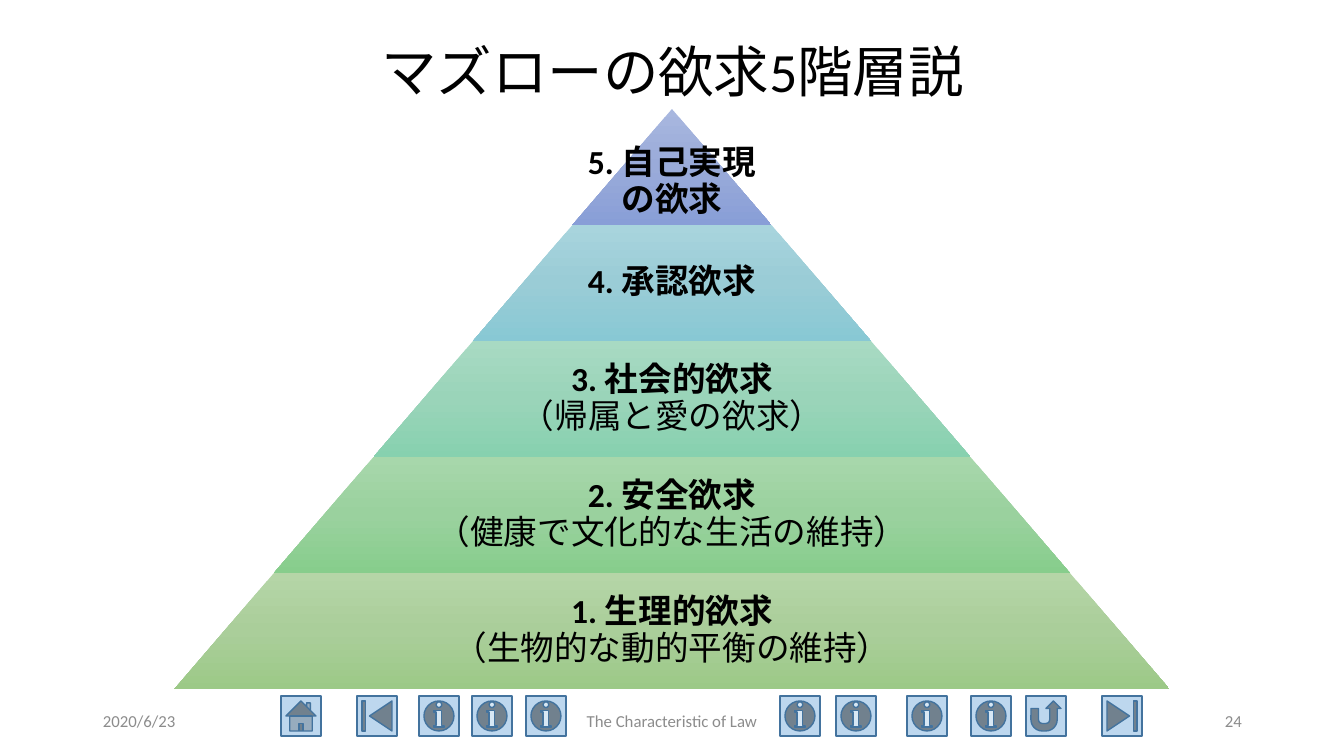
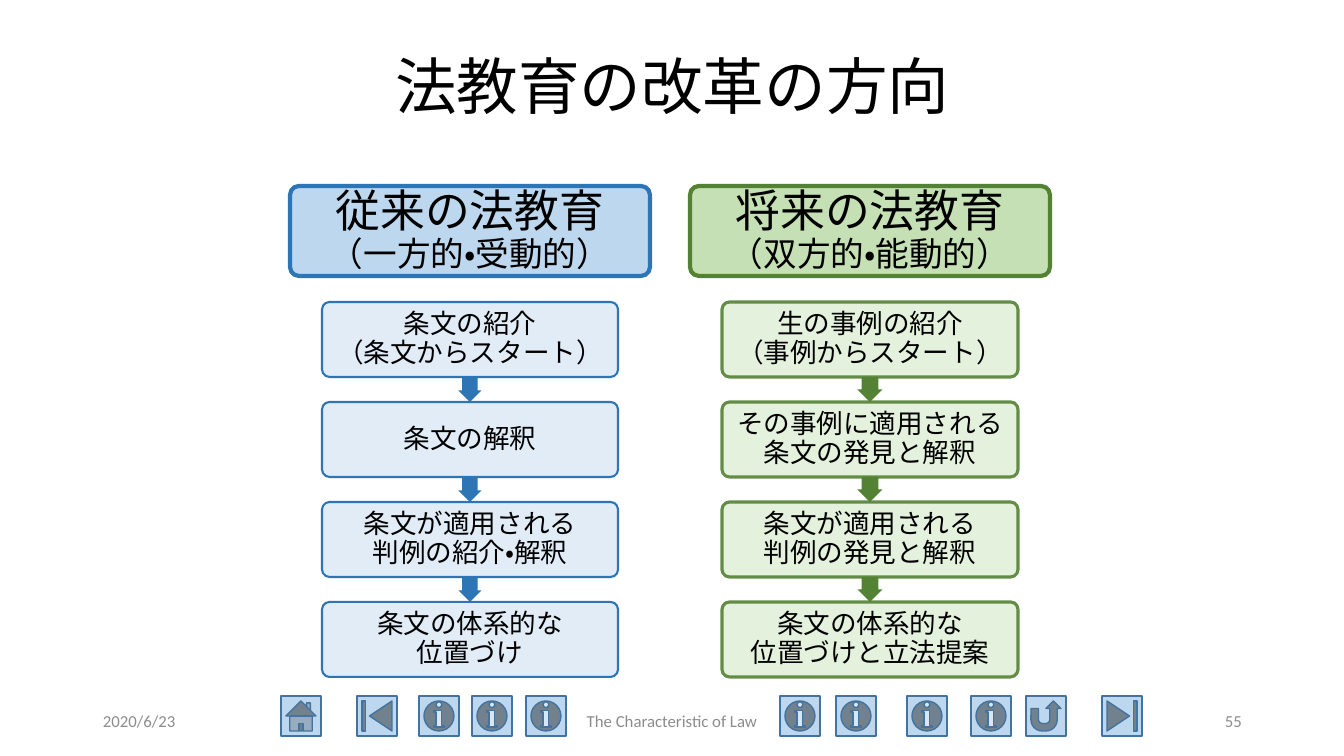
from copy import deepcopy

from lxml import etree
from pptx import Presentation
from pptx.dml.color import RGBColor
from pptx.enum.lang import MSO_LANGUAGE_ID
from pptx.enum.shapes import MSO_SHAPE
from pptx.enum.text import MSO_ANCHOR, PP_ALIGN
from pptx.oxml.ns import qn
from pptx.util import Emu, Pt

LEFT, CENTER, RIGHT = PP_ALIGN.LEFT, PP_ALIGN.CENTER, PP_ALIGN.RIGHT
MIDDLE = MSO_ANCHOR.MIDDLE
JAPANESE = MSO_LANGUAGE_ID.JAPANESE
TRAPEZOID, ROUNDED = MSO_SHAPE.TRAPEZOID, MSO_SHAPE.ROUNDED_RECTANGLE
DOWN_ARROW = MSO_SHAPE.DOWN_ARROW
HOME, BEGINNING = MSO_SHAPE.ACTION_BUTTON_HOME, MSO_SHAPE.ACTION_BUTTON_BEGINNING
INFORMATION = MSO_SHAPE.ACTION_BUTTON_INFORMATION
RETURN, END = MSO_SHAPE.ACTION_BUTTON_RETURN, MSO_SHAPE.ACTION_BUTTON_END

SLIDE_WIDTH, SLIDE_HEIGHT = 1344, 756
SCALE = 12192000 / SLIDE_WIDTH
FONT = "Calibri"
COLORS = {
    "text": "000000", "footer": "8C8C8C",
    "button": "BDD7EE", "button_line": "43739E",
    "blue": "2E75B6", "blue_header": "BDD7EE", "blue_step": "DEEBF7",
    "green": "548235", "green_header": "C5E0B4", "green_step": "E2F0D9",
}
BUTTONS = [
    (HOME, 281), (BEGINNING, 357), (INFORMATION, 419), (INFORMATION, 472),
    (INFORMATION, 526), (INFORMATION, 780), (INFORMATION, 836),
    (INFORMATION, 907), (INFORMATION, 971), (RETURN, 1026), (END, 1102),
]


def px(length):
    return Emu(round(length * SCALE))


def rgb(name):
    return RGBColor.from_string(COLORS[name])


def set_opacity(element, percent):
    for color in element.iter(qn("a:srgbClr")):
        etree.SubElement(color, qn("a:alpha"), val=str(percent * 1000))


def write(shape, text, sizes, *, bolds=(False,), color="text", align=CENTER,
          spacing=0.9, insets=(3, 3)):
    """Fill a shape with lines; the last size and weight serve any further lines."""
    frame = shape.text_frame
    frame.word_wrap = True
    frame.vertical_anchor = MIDDLE
    frame.margin_left = frame.margin_right = px(insets[0])
    frame.margin_top = frame.margin_bottom = px(insets[1])
    para = frame.paragraphs[0]
    para.alignment = align
    para.line_spacing = spacing
    for index, line in enumerate(text.split("\n")):
        if index:
            para.add_line_break()
        span = para.add_run()
        span.text = line
        font = span.font
        font.name = FONT
        font.size = Pt(sizes[min(index, len(sizes) - 1)])
        font.bold = bolds[min(index, len(bolds) - 1)]
        font.color.rgb = rgb(color)
        font.language_id = JAPANESE


class Deck:
    """Holds the shared style and the slide being built."""

    def __init__(self):
        self.deck = Presentation()
        self.deck.slide_width = px(SLIDE_WIDTH)
        self.deck.slide_height = px(SLIDE_HEIGHT)
        self.page = None

    def add_page(self, title, number, title_size, title_height):
        self.page = self.deck.slides.add_slide(self.deck.slide_layouts[6])
        for kind, left in BUTTONS:
            self.shape(kind, left, 696, 40, 40, fill="button",
                       line="button_line", weight=1)
        self.text(title, 93, 40, 1159, title_height, [title_size], insets=(10, 5))
        for text, left, width, align in (
            ("2020/6/23", 93, 302, LEFT),
            ("The Characteristic of Law", 445, 454, CENTER),
            (number, 950, 302, RIGHT),
        ):
            self.text(text, left, 701, width, 40, [12], color="footer",
                      align=align, spacing=1.0, insets=(10, 5))

    def text(self, text, left, top, width, height, sizes, **style):
        box = self.page.shapes.add_textbox(px(left), px(top), px(width), px(height))
        write(box, text, sizes, **style)

    def shape(self, kind, left, top, width, height, *, fill=None, line=None,
              weight=1, adjust=()):
        shape = self.page.shapes.add_shape(
            kind, px(left), px(top), px(width), px(height))
        shape.shadow.inherit = False
        for index, value in enumerate(adjust):
            shape.adjustments[index] = value
        if fill:
            shape.fill.solid()
            shape.fill.fore_color.rgb = rgb(fill)
        if line:
            shape.line.color.rgb = rgb(line)
            shape.line.width = Pt(weight)
        else:
            shape.line.fill.background()
        return shape

    def tier(self, center, top, width, height, slope, gradient):
        tier = self.shape(TRAPEZOID, center - width / 2, top, width, height,
                          adjust=[slope])
        tier.fill.gradient()
        tier.fill.gradient_angle = 270
        stop_list = tier._element.spPr.find(".//" + qn("a:gsLst"))
        stop_list.append(deepcopy(stop_list[-1]))
        for stop, position, color in zip(tier.fill.gradient_stops, (0, 0.5, 1), gradient):
            stop.position = position
            stop.color.rgb = RGBColor.from_string(color)

    def card(self, text, left, top, width, height, sizes, *, opacity=100,
             line_opacity=100, **style):
        card = self.shape(ROUNDED, left, top, width, height, adjust=[0.1], **style)
        properties = card._element.spPr
        if opacity < 100:
            set_opacity(properties.find(qn("a:solidFill")), opacity)
        if line_opacity < 100:
            set_opacity(properties.find(qn("a:ln")), line_opacity)
        write(card, text, sizes)

    def save(self):
        self.deck.save("out.pptx")


def build_pyramid(deck):
    deck.add_page("マズローの欲求5階層説", "24", 39.6, 69)
    center, apex, height, growth = 672, 109, 116, 199
    tiers = [
        ("5. 自己実現\nの欲求", ("A8B7DF", "9AABD9", "889ED7")),
        ("4. 承認欲求", ("A8D4DD", "9ACCD6", "88C8D4")),
        ("3. 社会的欲求\n（帰属と愛の欲求）", ("A8DAC3", "9AD4B9", "87D1AF")),
        ("2. 安全欲求\n（健康で文化的な生活の維持）", ("A7D7AB", "9AD19E", "87CD8C")),
        ("1. 生理的欲求\n（生物的な動的平衡の維持）", ("B5D5A7", "AACE9A", "9CC987")),
    ]
    for index, (label, gradient) in enumerate(tiers):
        top, width = apex + index * height, growth * (index + 1)
        deck.tier(center, top, width, height, growth / 2 / height, gradient)
        at_peak = index == 0
        label_width = width if at_peak else round(width * 0.65)
        label_drop = 15 if at_peak else 0
        deck.text(label, center - label_width / 2, top + label_drop,
                  label_width, height, [24], bolds=(True, at_peak))


def build_reform(deck):
    deck.add_page("法教育の改革の方向", "55", 44, 99)
    header_width, step_width, step_height, pitch = 360, 296, 75, 100
    columns = [
        ("blue", 470, 1.5, 100, 23, "従来の法教育\n（一方的・受動的）",
         ["条文の紹介\n（条文からスタート）", "条文の解釈",
          "条文が適用される\n判例の紹介・解釈", "条文の体系的な\n位置づけ"]),
        ("green", 870, 2.25, 90, 25, "将来の法教育\n（双方的・能動的）",
         ["生の事例の紹介\n（事例からスタート）", "その事例に適用される\n条文の発見と解釈",
          "条文が適用される\n判例の発見と解釈", "条文の体系的な\n位置づけと立法提案"]),
    ]
    for color, center, weight, line_opacity, arrow_width, header, steps in columns:
        deck.card(header, center - header_width / 2, 186, header_width, 90,
                  [32, 24], fill=color + "_header", line=color, weight=3)
        for index, step in enumerate(steps):
            top = 302 + index * pitch
            if index:
                gap = pitch - step_height
                deck.shape(DOWN_ARROW, center - arrow_width / 2, top - gap,
                           arrow_width, gap, fill=color, adjust=[0.67, 0.5])
            deck.card(step, center - step_width / 2, top, step_width, step_height,
                      [19], fill=color + "_step", line=color, weight=weight,
                      opacity=90, line_opacity=line_opacity)


def main():
    deck = Deck()
    build_pyramid(deck)
    build_reform(deck)
    deck.save()


if __name__ == "__main__":
    main()
